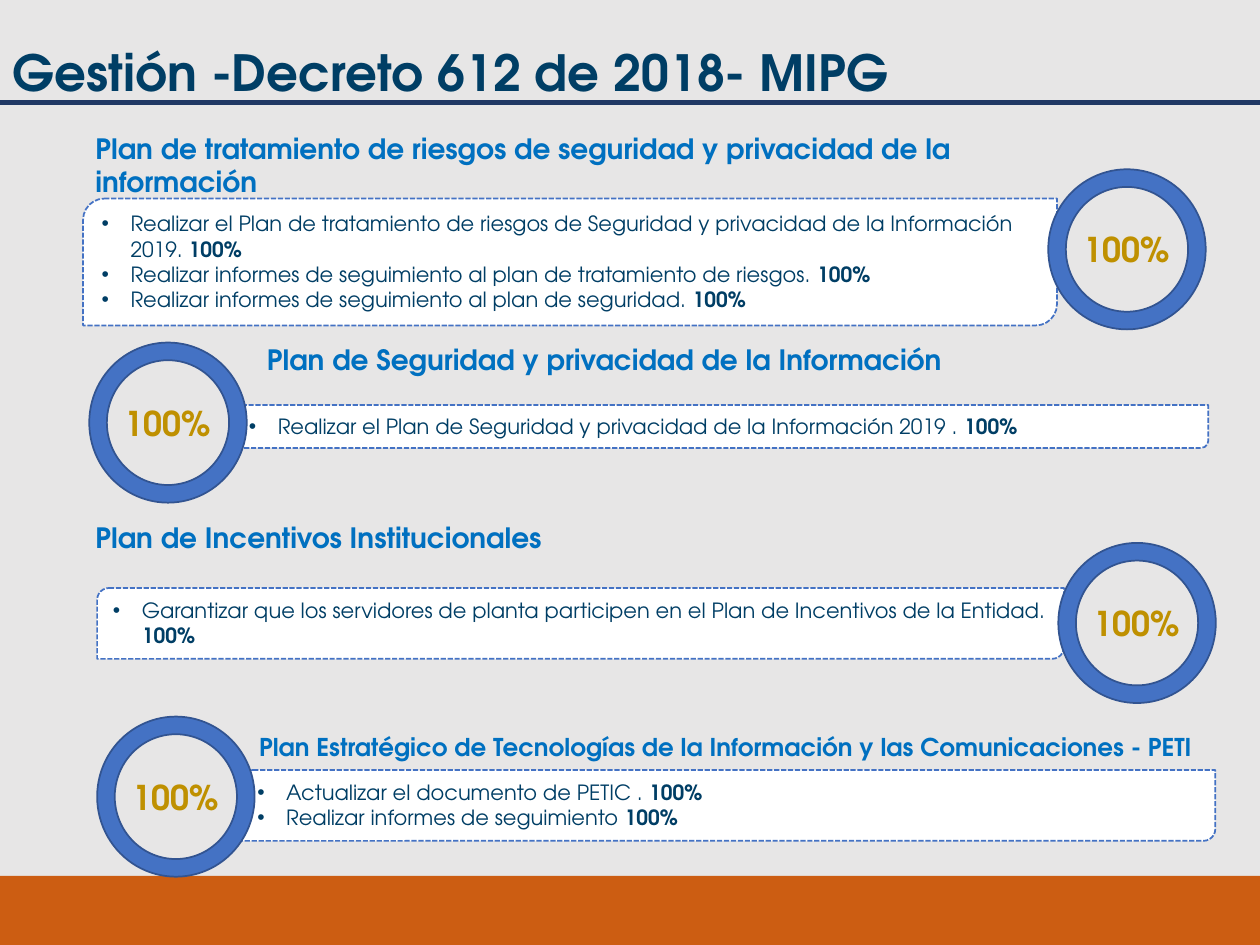
from lxml import etree
from pptx import Presentation
from pptx.dml.color import RGBColor
from pptx.enum import dml, shapes, text
from pptx.oxml.ns import qn
from pptx.util import Pt

FONT = "TeX Gyre Adventor"
NAVY, SKY, BLUE, GOLD = "003E65", "0070C0", "4472C4", "BF9000"
TITLE = "Gestión -Decreto 612 de 2018- MIPG"
DONE = "100%"
RING_W, RING_H, RING_LABEL_H, RING_LABEL_DROP = 90, 91.5, 31, 30.5
BULLET_INDENT = 16.5

PLANS = [
    {
        "heading": "Plan de tratamiento de riesgos de seguridad y privacidad de la información",
        "heading_at": (47.5, 71.5, 576, 46), "size": 16,
        "tasks": [
            "Realizar el Plan de tratamiento de riesgos de Seguridad y privacidad de la Información 2019. ",
            "Realizar informes de seguimiento al plan de tratamiento de riesgos. ",
            "Realizar informes de seguimiento al plan de seguridad. ",
        ],
        "panel_at": (47.5, 113.5, 556.5, 72.5),
        "ring_at": (599, 96.75),
    },
    {
        "heading": "Plan de Seguridad y privacidad de la Información",
        "heading_at": (145.5, 192, 515, 26.5), "size": 16,
        "tasks": ["Realizar el Plan de Seguridad y privacidad de la Información 2019 . "],
        "panel_at": (134, 231.5, 556.5, 24.5),
        "ring_at": (51, 195.75),
    },
    {
        "heading": "Plan de Incentivos Institucionales",
        "heading_at": (47.5, 294, 576, 26.5), "size": 16,
        "tasks": ["Garantizar que los servidores de planta participen en el Plan de Incentivos de la Entidad. "],
        "panel_at": (55.5, 336, 552.5, 40.5),
        "ring_at": (604.75, 310.25),
    },
    {
        "heading": "Plan Estratégico de Tecnologías de la Información y las Comunicaciones - PETI",
        "heading_at": (141, 414.5, 551, 24.5), "size": 14,
        "tasks": ["Actualizar el documento de PETIC . ", "Realizar informes de seguimiento "],
        "panel_at": (138, 440, 556.5, 40.5),
        "ring_at": (55.5, 409.5),
    },
]


def rgb(value):
    return RGBColor.from_string(value)


def points(*lengths):
    return [Pt(length) for length in lengths]


def style(run, size, color, bold=False):
    run.font.name = FONT
    run.font.size = Pt(size)
    run.font.bold = bold
    run.font.color.rgb = rgb(color)


def add_shape(parent, preset, at, fill, line=None):
    shape = parent.add_shape(preset, *points(*at))
    shape.shadow.inherit = False
    shape.fill.solid()
    shape.fill.fore_color.rgb = rgb(fill)
    if line:
        shape.line.color.rgb = rgb(line)
        shape.line.width = Pt(1)
    else:
        shape.line.fill.background()
    return shape


def add_label(parent, wording, at, size, color, align=text.PP_ALIGN.LEFT):
    frame = parent.add_textbox(*points(*at)).text_frame
    frame.word_wrap = True
    frame.text = wording
    frame.paragraphs[0].alignment = align
    style(frame.paragraphs[0].runs[0], size, color, True)


def add_bullet(paragraph):
    props = paragraph._p.get_or_add_pPr()
    props.set("marL", str(Pt(BULLET_INDENT)))
    props.set("indent", str(-Pt(BULLET_INDENT)))
    etree.SubElement(props, qn("a:buFont")).set("typeface", "Arial")
    etree.SubElement(props, qn("a:buChar")).set("char", "•")


def add_panel(slide, tasks, at):
    panel = add_shape(slide.shapes, shapes.MSO_SHAPE.ROUND_2_DIAG_RECTANGLE, at, "FFFFFF", BLUE)
    panel.line.dash_style = dml.MSO_LINE.SQUARE_DOT
    frame = panel.text_frame
    frame.word_wrap = True
    frame.vertical_anchor = text.MSO_ANCHOR.TOP
    for i, task in enumerate(tasks):
        paragraph = frame.add_paragraph() if i else frame.paragraphs[0]
        paragraph.alignment = text.PP_ALIGN.LEFT
        add_bullet(paragraph)
        for wording, bold in ((task, False), (DONE, True)):
            run = paragraph.add_run()
            run.text = wording
            style(run, 12, NAVY, bold)


def add_ring(slide, left, top):
    group = slide.shapes.add_group_shape().shapes
    ring = add_shape(group, shapes.MSO_SHAPE.DONUT, (left, top, RING_W, RING_H), BLUE, "325491")
    ring.adjustments[0] = 0.112
    label_at = (left, top + RING_LABEL_DROP, RING_W, RING_LABEL_H)
    add_label(group, DONE, label_at, 19.5, GOLD, text.PP_ALIGN.CENTER)


def add_title(slide):
    title = slide.shapes.title
    title.left, title.top, title.width, title.height = points(0, 22.5, 607.5, 36.5)
    frame = title.text_frame
    frame.text = TITLE
    frame.auto_size = text.MSO_AUTO_SIZE.NONE
    frame.vertical_anchor = text.MSO_ANCHOR.MIDDLE
    frame.paragraphs[0].alignment = text.PP_ALIGN.LEFT
    style(frame.paragraphs[0].runs[0], 28.5, NAVY, True)


def main():
    deck = Presentation()
    deck.slide_width, deck.slide_height = points(720, 540)
    slide = deck.slides.add_slide(deck.slide_layouts[5])
    slide.background.fill.solid()
    slide.background.fill.fore_color.rgb = rgb("E7E6E6")

    add_shape(slide.shapes, shapes.MSO_SHAPE.RECTANGLE, (0, 500.5, 720, 39.5), "CC5D12")
    rule = slide.shapes.add_connector(shapes.MSO_CONNECTOR.STRAIGHT, *points(0, 58.5, 720, 58.5))
    rule.line.color.rgb = rgb("203864")
    rule.line.width = Pt(3)
    etree.SubElement(rule._element.spPr, qn("a:effectLst"))
    add_title(slide)

    for plan in PLANS:
        add_panel(slide, plan["tasks"], plan["panel_at"])
        add_label(slide.shapes, plan["heading"], plan["heading_at"], plan["size"], SKY)
        add_ring(slide, *plan["ring_at"])
    deck.save("out.pptx")


if __name__ == "__main__":
    main()
